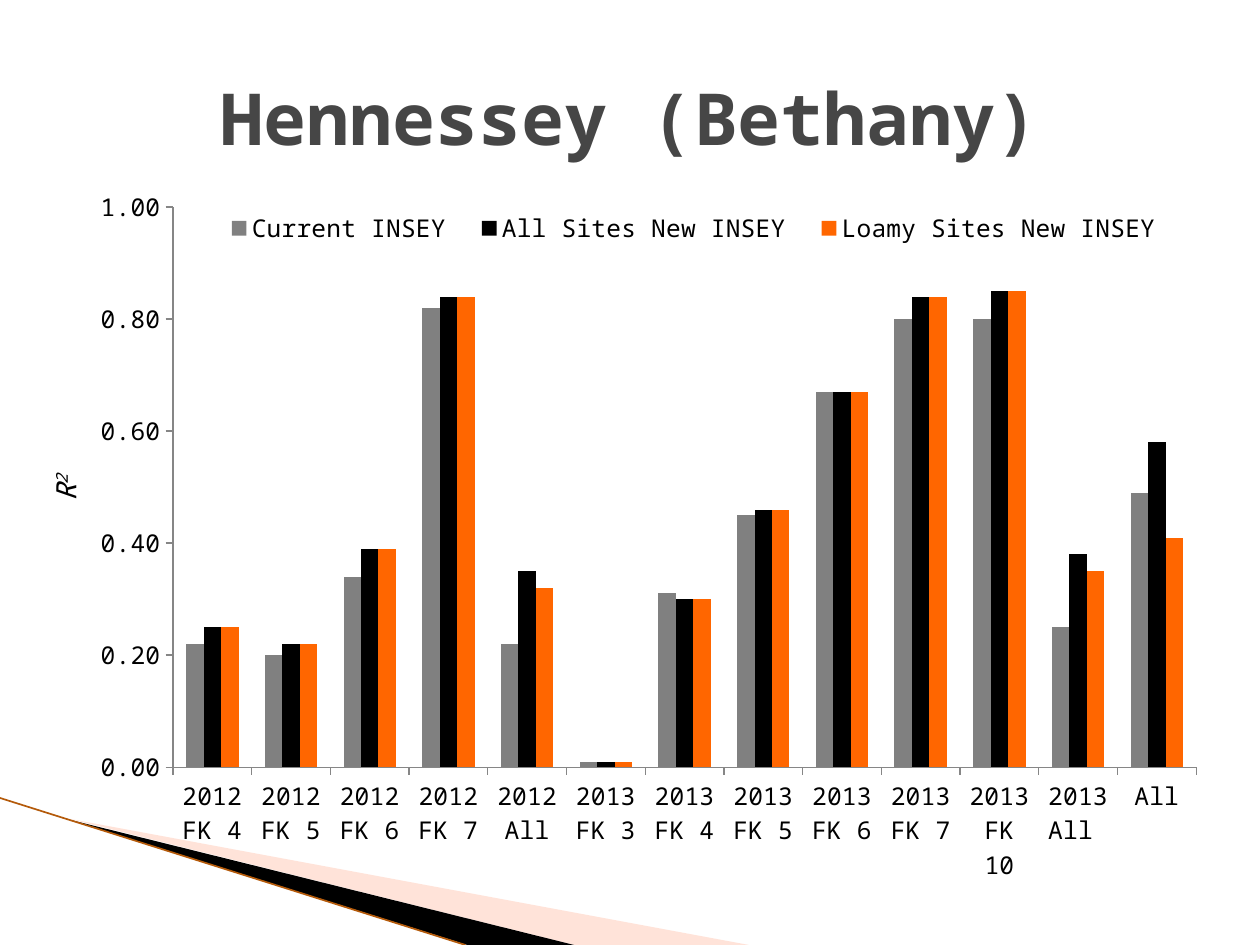
import pptx
import pptx.chart.data
import pptx.dml.color
import pptx.enum.chart
import pptx.enum.shapes
import pptx.enum.text
import pptx.oxml
import pptx.oxml.ns
import pptx.util
from dataclasses import dataclass
from lxml import etree

Pt = pptx.util.Pt
qn = pptx.oxml.ns.qn


@dataclass(frozen=True)
class Theme:
    font: str = "Noto Sans Mono"
    heading: str = "464646"
    ink: str = "000000"
    axis: str = "868686"
    blush: str = "FFBAA2"
    edge: str = "B45A0A"
    series: tuple = ("808080", "000000", "FF6600")
    title_size: int = 41
    chart_size: int = 18
    axis_title_size: int = 16
    label_size: int = 14


def rgb(value):
    return pptx.dml.color.RGBColor.from_string(value)


def add_run(paragraph, text, *, font, size, color, bold=False, italic=False, baseline=None):
    run = paragraph.add_run()
    run.text = text
    run.font.name, run.font.size = font, Pt(size)
    run.font.bold, run.font.italic = bold, italic
    run.font.color.rgb = rgb(color)
    if baseline:
        run.font._element.set("baseline", str(baseline * 1000))


def set_layout(parent, index, x, y, w, h, inner=False):
    for old in parent.findall(qn("c:layout")):
        parent.remove(old)
    layout = etree.Element(qn("c:layout"))
    manual = etree.SubElement(layout, qn("c:manualLayout"))
    settings = [("layoutTarget", "inner")] if inner else []
    settings += [("xMode", "edge"), ("yMode", "edge"), ("x", x), ("y", y), ("w", w), ("h", h)]
    for tag, value in settings:
        etree.SubElement(manual, qn(f"c:{tag}")).set("val", str(value))
    parent.insert(index, layout)


class SlideBuilder:
    def __init__(self, slide, theme):
        self.slide, self.theme = slide, theme

    def wedge(self, points, color, opacity=None):
        builder = self.slide.shapes.build_freeform(*points[0], scale=Pt(1))
        builder.add_line_segments(points[1:], close=True)
        wedge = builder.convert_to_shape()
        wedge.shadow.inherit = False
        wedge.fill.solid()
        wedge.fill.fore_color.rgb = rgb(color)
        wedge.line.fill.background()
        if opacity:
            fill_color = wedge._element.spPr.find(qn("a:solidFill"))[0]
            etree.SubElement(fill_color, qn("a:alpha")).set("val", str(opacity * 1000))

    def line(self, start, end, color, width):
        edge = self.slide.shapes.add_connector(
            pptx.enum.shapes.MSO_CONNECTOR.STRAIGHT, *map(Pt, start + end))
        edge.line.color.rgb = rgb(color)
        edge.line.width = Pt(width)
        etree.SubElement(edge._element.spPr, qn("a:effectLst"))

    def text(self, box, runs, *, rotation=0, middle=False, **style):
        label = self.slide.shapes.add_textbox(*map(Pt, box))
        label.rotation = rotation
        frame = label.text_frame
        frame.word_wrap = True
        if middle:
            frame.vertical_anchor = pptx.enum.text.MSO_ANCHOR.MIDDLE
        paragraph = frame.paragraphs[0]
        paragraph.alignment = pptx.enum.text.PP_ALIGN.CENTER
        for text, extra in runs:
            add_run(paragraph, text, font=self.theme.font, **style, **extra)

    def column_chart(self, box, categories, series):
        theme = self.theme
        data = pptx.chart.data.CategoryChartData(number_format="0.00")
        data.categories = categories
        for name, values in series.items():
            data.add_series(name, values)
        chart = self.slide.shapes.add_chart(
            pptx.enum.chart.XL_CHART_TYPE.COLUMN_CLUSTERED, *map(Pt, box), data).chart
        chart.has_title = False
        chart.font.name, chart.font.size = theme.font, Pt(theme.chart_size)
        chart.font.color.rgb = rgb(theme.ink)

        # Columns
        plot = chart.plots[0]
        plot.vary_by_categories = False
        plot.gap_width, plot.overlap = 150, 0
        for columns, color in zip(plot.series, theme.series):
            columns.format.fill.solid()
            columns.format.fill.fore_color.rgb = rgb(color)
        set_layout(chart._chartSpace.chart.plotArea, 0, 0.103, 0.053, 0.878, 0.751, inner=True)

        # Axes
        for axis in (chart.category_axis, chart.value_axis):
            axis.has_major_gridlines = False
            axis.major_tick_mark = pptx.enum.chart.XL_TICK_MARK.OUTSIDE
            axis.tick_labels.font.size = Pt(theme.label_size)
            axis.format.line.color.rgb = rgb(theme.axis)
        scale = chart.value_axis
        scale.minimum_scale, scale.maximum_scale, scale.major_unit = 0, 1, 0.2
        scale.tick_labels.number_format = "#,##0.00"
        scale.tick_labels.number_format_is_linked = False

        # Legend
        chart.has_legend = True
        legend = chart.legend
        legend.position = pptx.enum.chart.XL_LEGEND_POSITION.RIGHT
        legend.include_in_layout = False
        legend.font.size = Pt(theme.label_size)
        set_layout(legend._element, 1, 0.13, 0.055, 0.84, 0.053)


def main():
    theme = Theme()
    deck = pptx.Presentation()
    deck.slide_width, deck.slide_height = Pt(720), Pt(540)
    page = SlideBuilder(deck.slides.add_slide(deck.slide_layouts[6]), theme)

    # Corner decoration
    page.wedge([(39.6, 468.5), (428, 540), (328, 540), (39.6, 468)], theme.blush, opacity=40)
    page.wedge([(38.5, 467.5), (328, 540), (267, 540), (38.5, 468)], theme.ink)
    page.line((0, 456), (266, 540), theme.edge, 0.95)

    # R² by year and growth stage
    categories = [f"2012 {stage}" for stage in ("FK 4", "FK 5", "FK 6", "FK 7", "All")]
    categories += [f"2013 {stage}" for stage in
                   ("FK 3", "FK 4", "FK 5", "FK 6", "FK 7", "FK 10", "All ")]
    categories.append("All")
    page.column_chart((30.24, 95.76, 666, 426.24), categories, {
        "Current INSEY":
            (0.22, 0.2, 0.34, 0.82, 0.22, 0.01, 0.31, 0.45, 0.67, 0.8, 0.8, 0.25, 0.49),
        "All Sites New INSEY":
            (0.25, 0.22, 0.39, 0.84, 0.35, 0.01, 0.3, 0.46, 0.67, 0.84, 0.85, 0.38, 0.58),
        "Loamy Sites New INSEY":
            (0.25, 0.22, 0.39, 0.84, 0.32, 0.01, 0.3, 0.46, 0.67, 0.84, 0.85, 0.35, 0.41),
    })

    # Title and axis title
    page.text((36, 21.6, 648, 90), [("Hennessey (Bethany)", {"bold": True})],
              middle=True, size=theme.title_size, color=theme.heading)
    page.text((-127.44, 265.68, 329.76, 26.64), [("R", {}), ("2", {"baseline": 30})],
              rotation=270, size=theme.axis_title_size, color=theme.ink, italic=True)

    deck.save("out.pptx")


if __name__ == "__main__":
    main()
